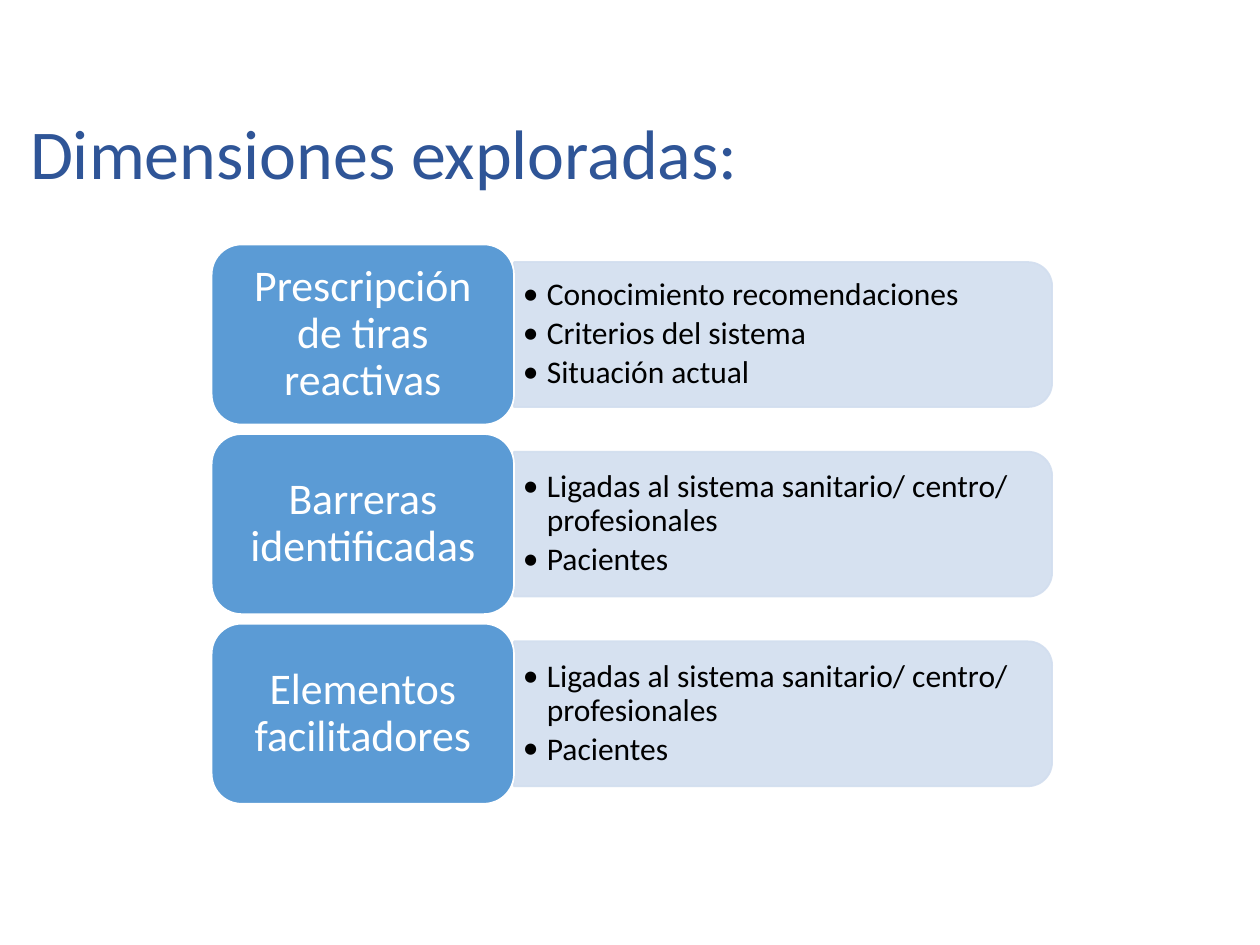
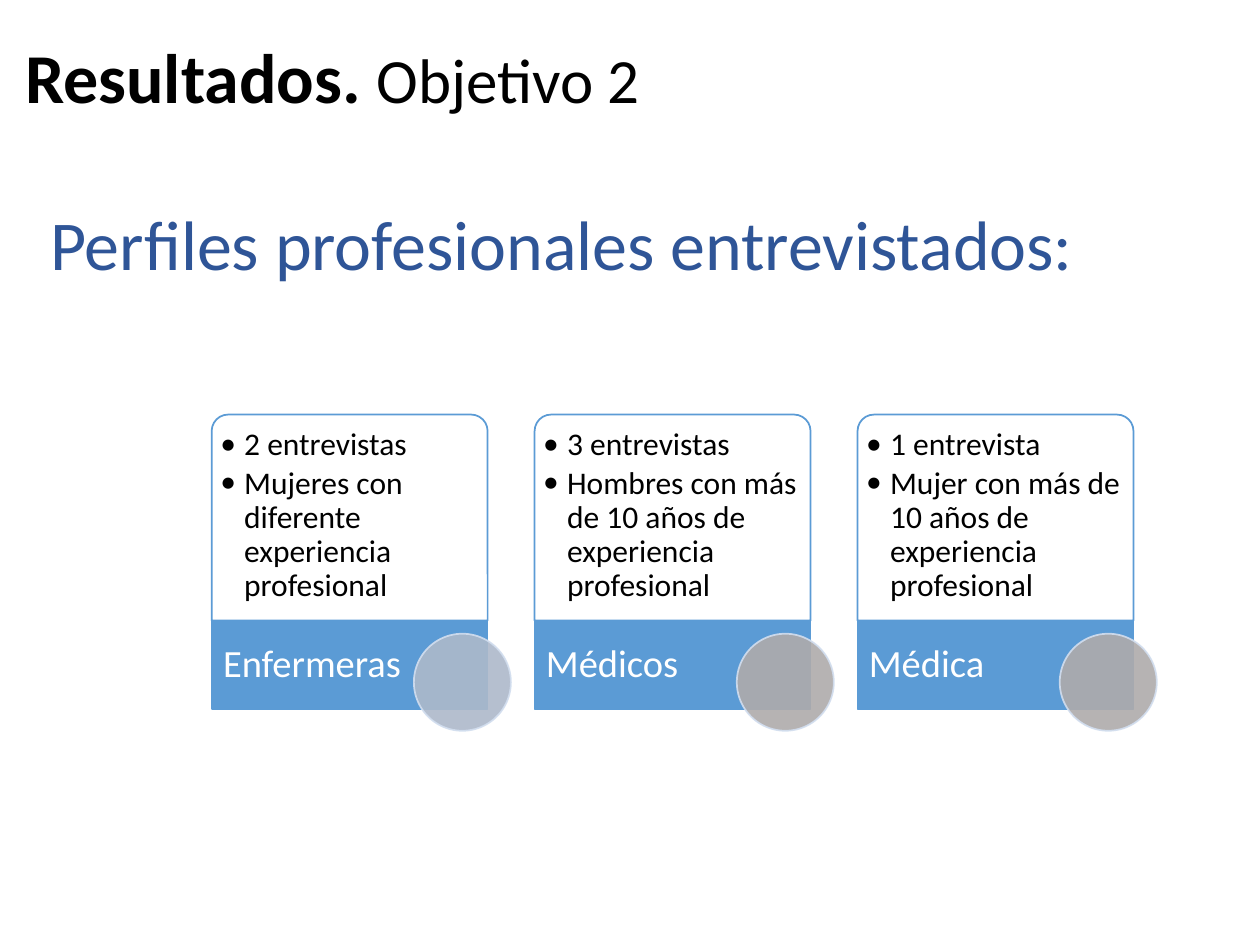
from lxml.etree import SubElement
from pptx import Presentation
from pptx.dml.color import RGBColor
from pptx.enum.shapes import MSO_SHAPE
from pptx.enum.text import MSO_ANCHOR, PP_ALIGN
from pptx.oxml.ns import qn
from pptx.util import Inches, Pt

# Shared style
COLUMNS, ROWS = 100, 75
FONT = "Calibri"
BLACK, WHITE, NAVY = "000000", "FFFFFF", "2F5597"
BLUE, PALE_BLUE = "5B9BD5", "D2DEEF"
BLUE_GREY, GREY = "ADB9CA", "AFABAB"
OPACITY = 90

HEADING = {"size": Pt(40), "color": NAVY}
BULLET = {"size": Pt(18), "color": BLACK}
LABEL = {"size": Pt(25), "color": WHITE}
CAPTION = {"size": Pt(22), "color": WHITE}

TIGHT = {"line_spacing": 0.9}
BULLET_SPACING = TIGHT | {"space_after": Pt(2.7)}


def color_of(hex_string):
    return RGBColor.from_string(hex_string)


def set_attributes(target, values):
    for name, value in values.items():
        setattr(target, name, value)


class Deck:
    """Holds the style, the grid and the current slide."""

    def __init__(self):
        self.presentation = Presentation()
        set_attributes(self.presentation, {"slide_width": Inches(10), "slide_height": Inches(7.5)})
        self.column = self.presentation.slide_width / COLUMNS
        self.row = self.presentation.slide_height / ROWS
        self.slide = None

    def new_slide(self):
        self.slide = self.presentation.slides.add_slide(self.presentation.slide_layouts[6])

    def box(self, left, top, width, height):
        lengths = (left * self.column, top * self.row, width * self.column, height * self.row)
        return [round(length) for length in lengths]

    def paint(self, fill, properties, hex_string, opacity):
        fill.solid()
        fill.fore_color.rgb = color_of(hex_string)
        if opacity < 100:
            color = properties.find(f"{qn('a:solidFill')}/{qn('a:srgbClr')}")
            SubElement(color, qn("a:alpha"), val=str(opacity * 1000))

    def shape(self, kind, area, fill, line, fill_opacity=100, line_opacity=100, adjustments=()):
        shape = self.slide.shapes.add_shape(kind, *self.box(*area))
        shape.shadow.inherit = False
        shape.line.width = Pt(1)
        properties = shape.element.spPr
        self.paint(shape.fill, properties, fill, fill_opacity)
        self.paint(shape.line.fill, properties.find(qn("a:ln")), line, line_opacity)
        for index, value in enumerate(adjustments):
            shape.adjustments[index] = value
        return shape

    def right_rounded(self, area):
        """A shape with two rounded corners, turned so that they face right."""
        left, top, width, height = area
        upright = (left + (width - height) / 2, top + (height - width) / 2, height, width)
        shape = self.shape(MSO_SHAPE.ROUND_2_SAME_RECTANGLE, upright, PALE_BLUE, PALE_BLUE,
                           OPACITY, OPACITY)
        shape.rotation = 90

    def put_text(self, shape, paragraphs, margins=(0.1, 0.05, 0.1, 0.05), anchor=MSO_ANCHOR.TOP,
                 spacing=None, align=PP_ALIGN.LEFT, bullets=False):
        """Fill a shape with paragraphs, each a list of (text, font style) runs."""
        frame = shape.text_frame
        sides = ("margin_left", "margin_top", "margin_right", "margin_bottom")
        set_attributes(frame, dict(zip(sides, map(Inches, margins))))
        set_attributes(frame, {"word_wrap": True, "vertical_anchor": anchor})
        for index, runs in enumerate(paragraphs):
            paragraph = frame.add_paragraph() if index else frame.paragraphs[0]
            set_attributes(paragraph, {"alignment": align} | (spacing or {}))
            if bullets:
                self.add_bullet(paragraph)
            for text, style in runs:
                run = paragraph.add_run()
                run.text = text
                values = {"name": FONT, "bold": False} | style
                run.font.color.rgb = color_of(values.pop("color"))
                set_attributes(run.font, values)

    def add_bullet(self, paragraph):
        properties = paragraph._p.get_or_add_pPr()
        properties.set("marL", str(Inches(0.19)))
        properties.set("indent", str(-Inches(0.19)))
        SubElement(properties, qn("a:buFont"), typeface=FONT)
        SubElement(properties, qn("a:buChar"), char="•")

    def text(self, area, paragraphs, **layout):
        self.put_text(self.slide.shapes.add_textbox(*self.box(*area)), paragraphs, **layout)

    def bullet_list(self, shape, items, **layout):
        self.put_text(shape, [[(item, BULLET)] for item in items],
                      spacing=BULLET_SPACING, bullets=True, **layout)

    def heading(self, left, top, text):
        self.text((left, top, 85.6, 7.7), [[(text, HEADING)]])

    # Slide 1: a label with its list of topics
    def dimension(self, top, name, topics):
        left, width, height = 16.8, 24, 14.3
        self.right_rounded((left + width, top + 1.4, 42.7, 11.5))
        topic_box = self.slide.shapes.add_textbox(*self.box(left + width, top + 2, 42.1, 10.3))
        self.bullet_list(topic_box, topics, margins=(0.07, 0.04, 0.07, 0.04),
                         anchor=MSO_ANCHOR.MIDDLE)
        label = self.shape(MSO_SHAPE.ROUNDED_RECTANGLE, (left, top, width, height), BLUE, WHITE)
        self.put_text(label, [[(name, LABEL)]], anchor=MSO_ANCHOR.MIDDLE,
                      spacing=TIGHT, align=PP_ALIGN.CENTER)

    # Slide 2: a card with a caption band and a disc
    def profile(self, left, name, facts, disc_fill):
        top, width, height = 32.9, 21.9, 16.35
        card = self.shape(MSO_SHAPE.ROUND_2_SAME_RECTANGLE, (left, top, width, height),
                          WHITE, BLUE, OPACITY, adjustments=(0.08, 0))
        self.bullet_list(card, facts, margins=(0.03, 0.07, 0.03, 0.03))
        band = self.shape(MSO_SHAPE.RECTANGLE, (left, top + height, width, 7), BLUE, BLUE)
        self.put_text(band, [[(name, CAPTION)]], margins=(0.09, 0, 0.68, 0),
                      anchor=MSO_ANCHOR.MIDDLE, spacing=TIGHT)
        self.shape(MSO_SHAPE.OVAL, (left + 16.05, top + 17.4, 7.7, 7.7), disc_fill, PALE_BLUE,
                   OPACITY, OPACITY)


def main():
    deck = Deck()

    # Dimensions explored
    deck.new_slide()
    deck.heading(1.4, 8.2, "Dimensiones exploradas:")
    shared_topics = ["Ligadas al sistema sanitario/ centro/ profesionales", "Pacientes"]
    dimensions = [
        ("Prescripción de tiras reactivas",
         ["Conocimiento recomendaciones", "Criterios del sistema", "Situación actual"]),
        ("Barreras identificadas", shared_topics),
        ("Elementos facilitadores", shared_topics),
    ]
    for index, (name, topics) in enumerate(dimensions):
        deck.dimension(19.4 + 15.05 * index, name, topics)

    # Professional profiles
    deck.new_slide()
    title = {"size": Pt(40), "color": BLACK, "bold": True}
    subtitle = {"size": Pt(36), "color": BLACK}
    deck.text((1, 2.9, 86.2, 14.5), [[("Resultados. ", title), ("Objetivo 2", subtitle)]],
              spacing=TIGHT)
    profiles = [
        ("Enfermeras", "2 entrevistas",
         "Mujeres con diferente experiencia profesional", BLUE_GREY),
        ("Médicos", "3 entrevistas",
         "Hombres con más de 10 años de experiencia profesional", GREY),
        ("Médica", "1 entrevista",
         "Mujer con más de 10 años de experiencia profesional", GREY),
    ]
    for index, (name, interviews, background, disc_fill) in enumerate(profiles):
        deck.profile(16.8 + 25.63 * index, name, [interviews, background], disc_fill)
    deck.heading(3, 15.4, "Perfiles profesionales entrevistados:")

    deck.presentation.save("out.pptx")


if __name__ == "__main__":
    main()
